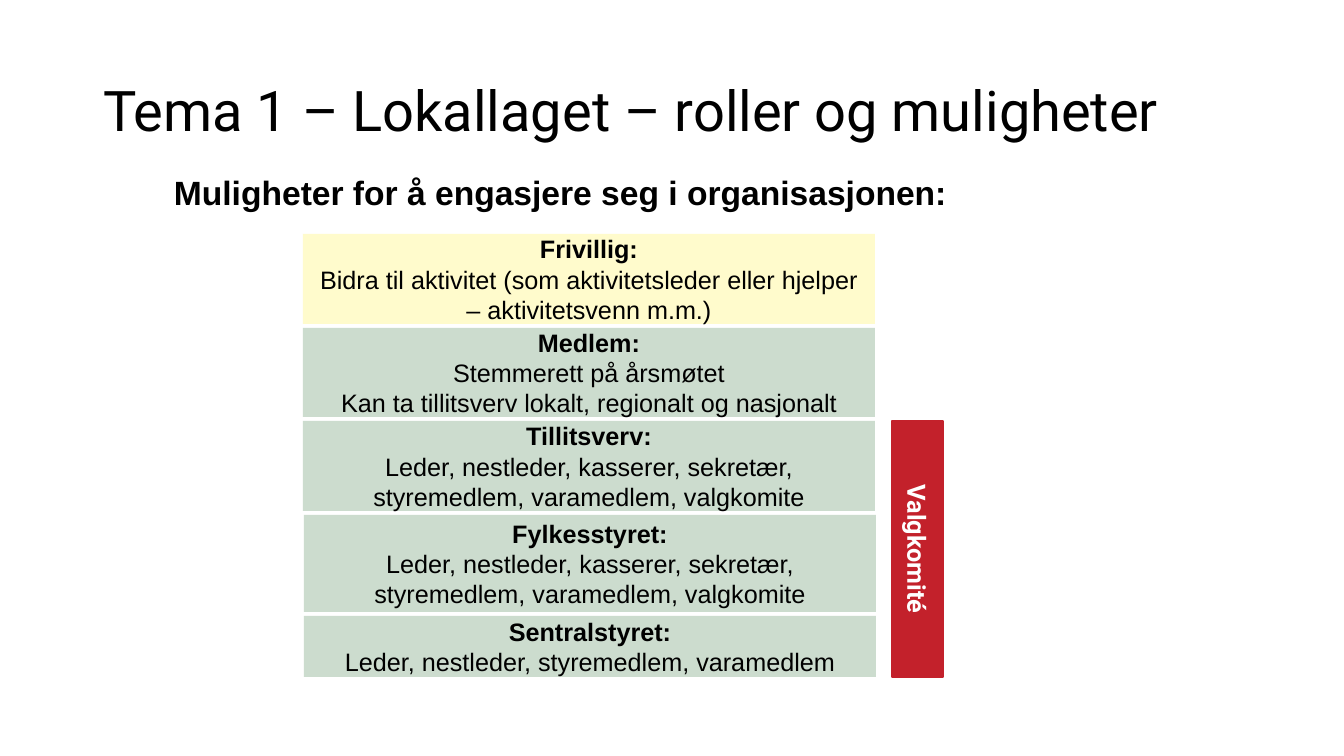
from pptx import Presentation
from pptx.dml.color import RGBColor
from pptx.enum import shapes, text
from pptx import util as u

BLACK = RGBColor(0x00, 0x00, 0x00)
WHITE = RGBColor(0xFF, 0xFF, 0xFF)
YELLOW = RGBColor(0xFF, 0xFB, 0xCC)
GREEN = RGBColor(0xCC, 0xDC, 0xCE)
RED = RGBColor(0xC3, 0x21, 0x2B)

TITLE = "Tema 1 – Lokallaget – roller og muligheter"
HEADING = "Muligheter for å engasjere seg i organisasjonen:"
COMMITTEE = "Valgkomité"
BOARD_ROLES = "Leder, nestleder, kasserer, sekretær, styremedlem, varamedlem, valgkomite"
ROLES = [
    ("Frivillig:", ["Bidra til aktivitet (som aktivitetsleder eller hjelper – aktivitetsvenn m.m.)"],
     YELLOW, 303, 90),
    ("Medlem:", ["Stemmerett på årsmøtet", "Kan ta tillitsverv lokalt, regionalt og nasjonalt"],
     GREEN, 303, 89),
    ("Tillitsverv:", [BOARD_ROLES], GREEN, 303, 90),
    ("Fylkesstyret:", [BOARD_ROLES], GREEN, 304, 97),
    ("Sentralstyret:", ["Leder, nestleder, styremedlem, varamedlem"], GREEN, 304, 61),
]
ROLES_TOP, ROLE_WIDTH, ROLE_GAP = 234, 572, 4


def px(length):
    """Turn pixels into EMU."""
    return u.Emu(round(length * 914400 / 100.8))


def add_span(para, words, size, font="Arial", color=BLACK, bold=False):
    """Add one formatted run to a paragraph."""
    span = para.add_run()
    span.text = words
    span.font.size = u.Pt(size)
    span.font.name = font
    span.font.color.rgb = color
    span.font.bold = bold


def set_frame(box, anchor, align):
    """Prepare a text frame and return its first paragraph."""
    frame = box.text_frame
    frame.word_wrap = True
    frame.vertical_anchor = anchor
    para = frame.paragraphs[0]
    para.alignment = align
    return para


def add_block(page, left, top, width, height, color):
    """Add a plain filled rectangle."""
    block = page.shapes.add_shape(
        shapes.MSO_SHAPE.RECTANGLE, px(left), px(top), px(width), px(height))
    block.shadow.inherit = False
    block.fill.solid()
    block.fill.fore_color.rgb = color
    block.line.fill.background()
    return block


def add_roles(page):
    """Stack the role boxes from top to bottom."""
    top = ROLES_TOP
    for name, lines, color, left, height in ROLES:
        block = add_block(page, left, top, ROLE_WIDTH, height, color)
        para = set_frame(block, text.MSO_ANCHOR.MIDDLE, text.PP_ALIGN.CENTER)
        add_span(para, name, 18, bold=True)
        para = block.text_frame.add_paragraph()
        para.alignment = text.PP_ALIGN.CENTER
        for index, line in enumerate(lines):
            if index:
                para.add_line_break()
            add_span(para, line, 18)
        top += height + ROLE_GAP


def main():
    """Build the slide."""
    deck = Presentation()
    deck.slide_width, deck.slide_height = px(1344), px(756)
    page = deck.slides.add_slide(deck.slide_layouts[5])

    title = page.shapes.title
    title.left, title.top, title.width, title.height = px(93), px(40), px(1159), px(146)
    para = set_frame(title, text.MSO_ANCHOR.MIDDLE, text.PP_ALIGN.LEFT)
    para.line_spacing = 0.9
    add_span(para, TITLE, 40, "Roboto")

    heading = page.shapes.add_textbox(px(164), px(156), px(828), px(62))
    para = set_frame(heading, text.MSO_ANCHOR.BOTTOM, text.PP_ALIGN.LEFT)
    para.line_spacing = 0.9
    add_span(para, HEADING, 24, bold=True)

    add_roles(page)

    committee = add_block(page, 892, 421, 51, 256, RED)
    committee.line.color.rgb = RED
    committee.line.width = u.Pt(1)
    para = set_frame(committee, text.MSO_ANCHOR.MIDDLE, text.PP_ALIGN.CENTER)
    committee.text_frame._txBody.bodyPr.set("vert", "vert")
    add_span(para, COMMITTEE, 18, "Roboto", WHITE, True)

    deck.save("out.pptx")


if __name__ == "__main__":
    main()
